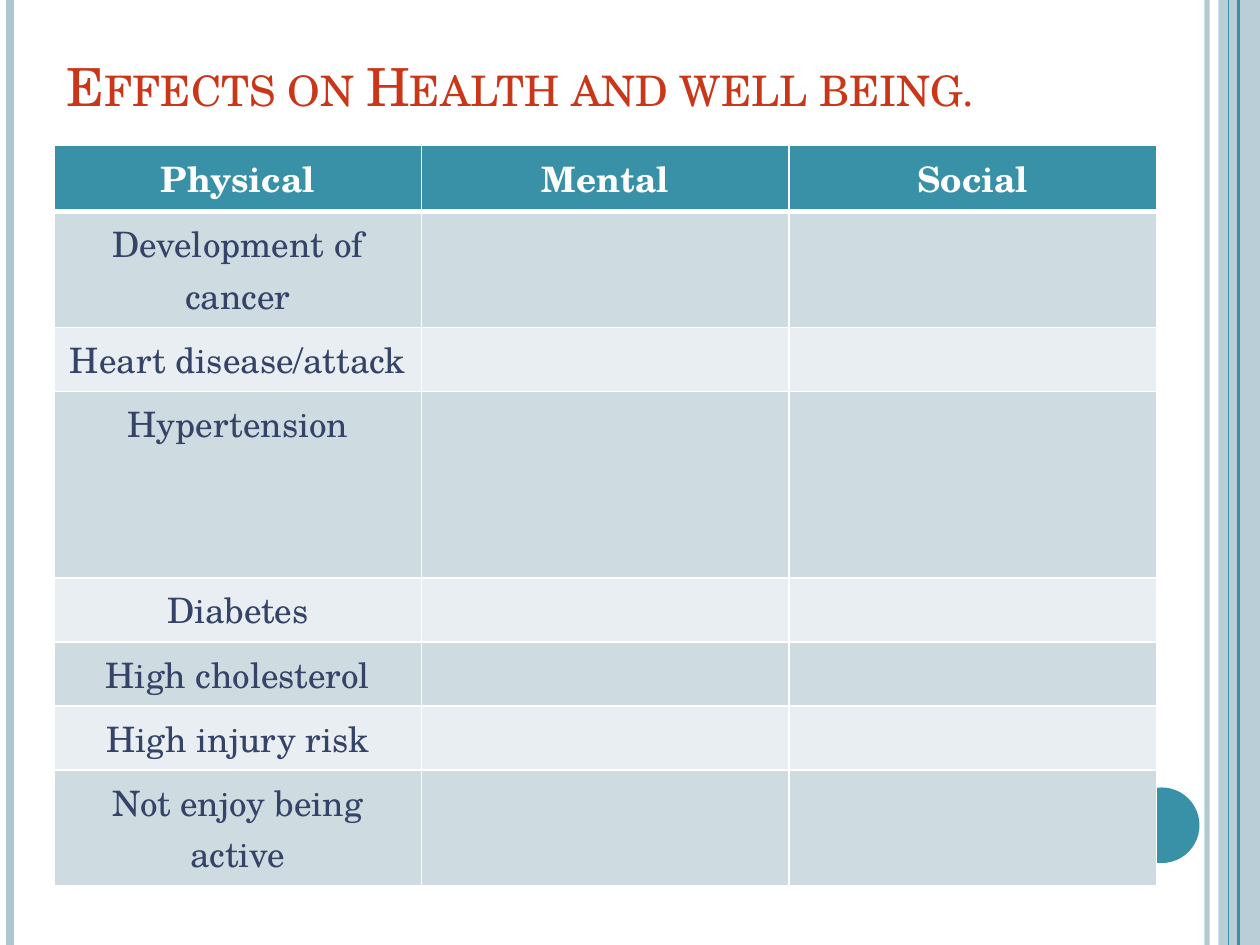
from lxml.etree import SubElement
from pptx import Presentation
from pptx.dml.color import RGBColor as RGB
from pptx.enum.shapes import MSO_CONNECTOR as Connector, MSO_SHAPE as Shape
from pptx.enum.text import MSO_ANCHOR as Anchor, MSO_AUTO_SIZE as AutoSize, PP_ALIGN as Align
from pptx.oxml import parse_xml
from pptx.oxml.ns import nsdecls, qn
from pptx.util import Inches, Pt

COLORS = {"teal": "3891A7", "mist": "AFC7D0", "title": "CA3618", "body": "354369",
          "band": "CEDCE1", "pale": "E8EEF1", "white": "FFFFFF"}


def write(frame, text, size=20, color="body", bold=False, align=Align.CENTER, small_caps=False):
    paragraph = frame.paragraphs[0]
    paragraph.alignment = align
    run = paragraph.add_run()
    run.text = text
    run.font.name = "TeX Gyre Schola"
    run.font.size = Pt(size)
    run.font.bold = bold
    run.font.color.rgb = RGB.from_string(COLORS[color])
    if small_caps:
        run.font._element.set("cap", "small")


def set_alpha(fill_parent, percent):
    color = fill_parent.find(".//" + qn("a:srgbClr"))
    SubElement(color, qn("a:alpha")).set("val", str(percent * 1000))


deck = Presentation()
deck.slide_width, deck.slide_height = Inches(10), Inches(7.5)
slide = deck.slides.add_slide(deck.slide_layouts[5])
shapes = slide.shapes

side_band = shapes.add_shape(Shape.RECTANGLE, Inches(9.67), 0, Inches(0.33), deck.slide_height)
badge = shapes.add_shape(Shape.OVAL, Inches(8.92), Inches(6.25), Inches(0.6), Inches(0.6))
for ornament, color in ((side_band, "mist"), (badge, "teal")):
    ornament.shadow.inherit = False
    ornament.fill.solid()
    ornament.fill.fore_color.rgb = RGB.from_string(COLORS[color])
    ornament.line.fill.background()
set_alpha(side_band._element.spPr, 87)

for x, color, width, alpha in ((9.58, "mist", 3, 93), (0.08, "mist", 4.5, 100),
                               (9.83, "teal", 1.5, 100), (9.75, "teal", 0.75, 100)):
    stripe = shapes.add_connector(Connector.STRAIGHT, Inches(x), 0, Inches(x), deck.slide_height)
    stripe.line.color.rgb = RGB.from_string(COLORS[color])
    stripe.line.width = Pt(width)
    if alpha < 100:
        set_alpha(stripe._element.spPr, alpha)
    SubElement(stripe._element.spPr, qn("a:effectLst"))

heading = shapes.title
heading.left, heading.top = Inches(0.43), Inches(-0.27)
heading.width, heading.height = Inches(8.17), Inches(1.25)
heading.text_frame.auto_size = AutoSize.NONE
heading.text_frame.vertical_anchor = Anchor.BOTTOM
write(heading.text_frame, "Effects on Health and well being.", size=30, color="title",
      align=Align.LEFT, small_caps=True)

headers = ["Physical", "Mental", "Social"]
physical_effects = ["Development of cancer", "Heart disease/attack", "Hypertension", "Diabetes",
                    "High cholesterol", "High injury risk", "Not enjoy being active"]
row_heights = [0.46, 0.8, 0.46, 1.48, 0.46, 0.46, 0.46, 0.8]
rows = [headers] + [[effect, "", ""] for effect in physical_effects]

effects = shapes.add_table(len(rows), len(headers), Inches(0.43), Inches(1.15),
                           Inches(8.75), Inches(sum(row_heights))).table
for row, height in zip(effects.rows, row_heights):
    row.height = Inches(height)

for r, texts in enumerate(rows):
    is_header = r == 0
    fill = "teal" if is_header else "band" if r % 2 else "pale"
    for c, text in enumerate(texts):
        cell = effects.cell(r, c)
        cell.fill.solid()
        cell.fill.fore_color.rgb = RGB.from_string(COLORS[fill])
        if text:
            write(cell.text_frame, text, color="white" if is_header else "body", bold=is_header)
        for position, side in enumerate("LRTB"):
            thick = (is_header and side == "B") or (r == 1 and side == "T")
            border = parse_xml(
                f'<a:ln{side} {nsdecls("a")} w="{Pt(3 if thick else 1)}"><a:solidFill>'
                f'<a:srgbClr val="{COLORS["white"]}"/></a:solidFill></a:ln{side}>')
            cell._tc.get_or_add_tcPr().insert(position, border)

deck.save("out.pptx")
